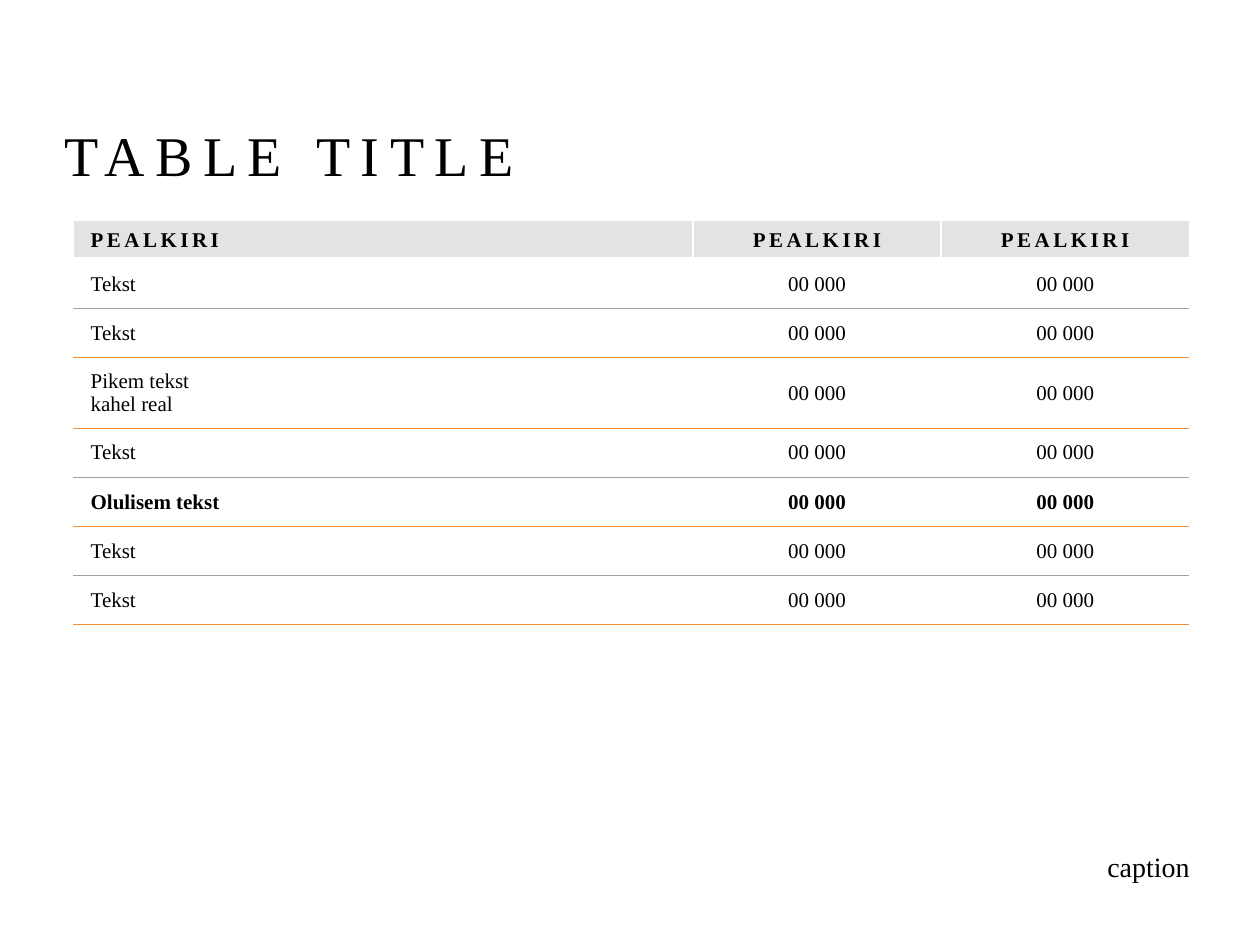
from copy import deepcopy
from dataclasses import dataclass

from lxml import etree
from pptx import Presentation
from pptx import util as u
from pptx.dml.color import RGBColor
from pptx.enum import text
from pptx.oxml.ns import qn


@dataclass(frozen=True)
class Theme:
    font: str = "Times New Roman"
    ink: str = "000000"
    paper: str = "FFFFFF"
    header: str = "E3E3E3"
    accent: str = "F68D2E"
    grey: str = "A0A0A0"
    title_size: int = 32
    table_size: int = 12
    caption_size: int = 16


THEME = Theme()
NO_STYLE = "{2D5ABB26-0587-4C30-8999-92F81FD0307C}"
LEFT, RIGHT = text.PP_ALIGN.LEFT, text.PP_ALIGN.RIGHT
CENTER = text.PP_ALIGN.CENTER
COLUMNS = [4.92, 1.97, 1.97]
HEADER_HEIGHT, LINE_HEIGHT, TALL_HEIGHT = 0.31, 0.39, 0.56
HEADINGS = ["PEALKIRI"] * 3
ROWS = [
    ("Tekst", THEME.grey),
    ("Tekst", THEME.accent),
    ("Pikem tekst\nkahel real", THEME.accent),
    ("Tekst", THEME.grey),
    ("Olulisem tekst", THEME.accent),
    ("Tekst", THEME.grey),
    ("Tekst", THEME.accent),
]
VALUE = "00 000"
IMPORTANT = "Olulisem tekst"


def write(tf, words, size, align=LEFT, bold=False, spacing=0):
    p = tf.paragraphs[0]
    p.text = words
    p.alignment = align
    for r in p.runs:
        r.font.name = THEME.font
        r.font.size = u.Pt(size)
        r.font.bold = bold
        r.font.color.rgb = RGBColor.from_string(THEME.ink)
        r.font._element.set("spc", str(spacing * 100))
    for br in p._p.findall(qn("a:br")):
        br.append(deepcopy(p.runs[0].font._element))
    return p


def set_borders(cell, **borders):
    tc_pr = cell._tc.get_or_add_tcPr()
    sides = [side for side in "LRTB" if side in borders]
    for index, side in enumerate(sides):
        color, width = borders[side]
        ln = etree.Element(qn(f"a:ln{side}"), w=str(u.Pt(width)))
        fill = etree.SubElement(ln, qn("a:solidFill"))
        etree.SubElement(fill, qn("a:srgbClr"), val=color)
        tc_pr.insert(index, ln)


def format_cell(cell, words, column, fill=None, **formats):
    cell.margin_left = cell.margin_right = u.Inches(0.14)
    cell.margin_top = cell.margin_bottom = u.Inches(0.06)
    cell.vertical_anchor = text.MSO_ANCHOR.MIDDLE
    if fill:
        cell.fill.solid()
        cell.fill.fore_color.rgb = RGBColor.from_string(fill)
    else:
        cell.fill.background()
    align = CENTER if column else LEFT
    write(cell.text_frame, words, THEME.table_size, align, **formats)


def add_title(slide, words):
    sp = slide.shapes.title
    sp.left, sp.top = u.Inches(0.41), u.Inches(0.3)
    sp.width, sp.height = u.Inches(9.15), u.Inches(1.24)
    tf = sp.text_frame
    tf.auto_size = text.MSO_AUTO_SIZE.NONE
    tf.vertical_anchor = text.MSO_ANCHOR.BOTTOM
    write(tf, words, THEME.title_size, spacing=6)


def add_data_table(slide):
    heights = [HEADER_HEIGHT] + [
        TALL_HEIGHT if "\n" in label else LINE_HEIGHT for label, _ in ROWS
    ]
    frame = slide.shapes.add_table(
        len(heights), len(COLUMNS), u.Inches(0.58), u.Inches(1.75),
        u.Inches(sum(COLUMNS)), u.Inches(sum(heights)))
    table = frame.table
    table.first_row = table.horz_banding = False
    table._tbl.tblPr.find(qn("a:tableStyleId")).text = NO_STYLE
    for column, width in zip(table.columns, COLUMNS):
        column.width = u.Inches(width)
    for row, height in zip(table.rows, heights):
        row.height = u.Inches(height)

    edge, thick_edge = (THEME.paper, 1), (THEME.paper, 3)
    for column, heading in enumerate(HEADINGS):
        cell = table.cell(0, column)
        format_cell(cell, heading, column, THEME.header, bold=True, spacing=2)
        set_borders(cell, L=edge, R=edge, T=edge, B=thick_edge)

    above = thick_edge
    for row, (label, color) in enumerate(ROWS, 1):
        below = (color, 1 if row == len(ROWS) else 0.5)
        for column, words in enumerate([label, VALUE, VALUE]):
            cell = table.cell(row, column)
            format_cell(cell, words, column, bold=label == IMPORTANT)
            set_borders(cell, T=above, B=below)
        above = below


def add_caption(slide, words):
    sp = slide.shapes.add_textbox(
        u.Inches(3.01), u.Inches(6.44), u.Inches(6.53), u.Inches(0.62))
    tf = sp.text_frame
    tf.word_wrap = True
    tf.vertical_anchor = text.MSO_ANCHOR.BOTTOM
    p = write(tf, words, THEME.caption_size, RIGHT)
    p.line_spacing = 1.2


def main():
    prs = Presentation()
    prs.slide_width, prs.slide_height = u.Inches(10), u.Inches(7.5)
    slide = prs.slides.add_slide(prs.slide_layouts[5])
    add_title(slide, "TABLE TITLE")
    add_data_table(slide)
    add_caption(slide, "caption")
    prs.save("out.pptx")


if __name__ == "__main__":
    main()
